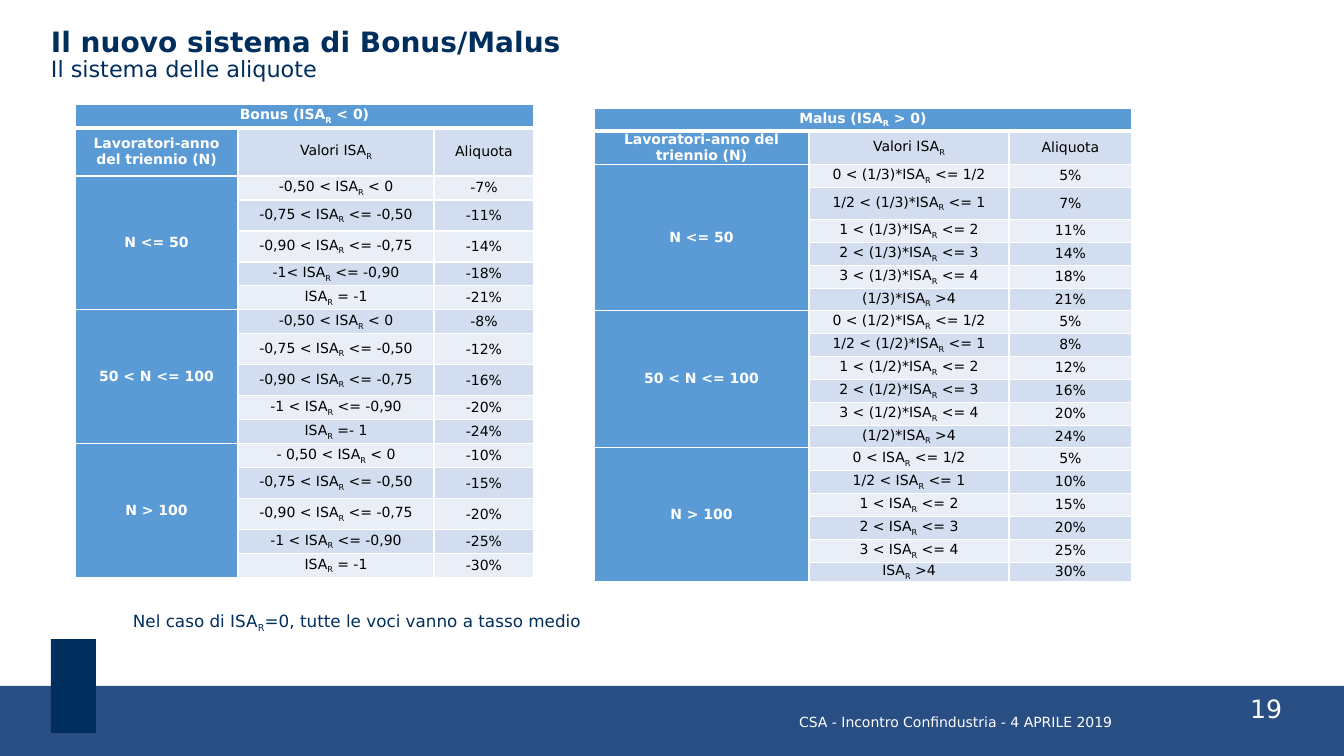
from lxml import etree
from pptx import Presentation
from pptx import util as u
from pptx.dml.color import RGBColor
from pptx.enum import shapes, text
from pptx.oxml.ns import qn

# Content: "_R" marks a subscript R
TITLE = "Il nuovo sistema di Bonus/Malus"
SUBTITLE = "Il sistema delle aliquote"
NOTE = "Nel caso di ISA_R=0, tutte le voci vanno a tasso medio"
FOOTER = "CSA - Incontro Confindustria - 4 APRILE 2019"
PAGE = "19"
HEADINGS = ("Lavoratori-anno del triennio (N)", "Valori ISA_R", "Aliquota")

BONUS = {
    "title": "Bonus (ISA_R < 0)",
    "at": (75, 104),
    "cols": (163, 196, 100),
    "rows": [24, 48] + [24, 31, 31, 24, 24] * 3,
    "groups": [
        ("N <= 50", [
            ("-0,50 < ISA_R < 0", "-7%"),
            ("-0,75 < ISA_R <= -0,50", "-11%"),
            ("-0,90 < ISA_R <= -0,75", "-14%"),
            ("-1< ISA_R <= -0,90", "-18%"),
            ("ISA_R = -1", "-21%")]),
        ("50 < N <= 100", [
            ("-0,50 < ISA_R < 0", "-8%"),
            ("-0,75 < ISA_R <= -0,50", "-12%"),
            ("-0,90 < ISA_R <= -0,75", "-16%"),
            ("-1 < ISA_R <= -0,90", "-20%"),
            ("ISA_R =- 1", "-24%")]),
        ("N > 100", [
            ("- 0,50 < ISA_R < 0", "-10%"),
            ("-0,75 < ISA_R <= -0,50", "-15%"),
            ("-0,90 < ISA_R <= -0,75", "-20%"),
            ("-1 < ISA_R <= -0,90", "-25%"),
            ("ISA_R = -1", "-30%")]),
    ],
}
MALUS = {
    "title": "Malus (ISA_R > 0)",
    "at": (594, 108),
    "cols": (215, 200, 123),
    "rows": [23, 33, 23, 32, 23, 23, 23, 22] + [23] * 5 + [22] + [23] * 5 + [17],
    "groups": [
        ("N <= 50", [
            ("0 < (1/3)*ISA_R <= 1/2", "5%"),
            ("1/2 < (1/3)*ISA_R <= 1", "7%"),
            ("1 < (1/3)*ISA_R <= 2", "11%"),
            ("2 < (1/3)*ISA_R <= 3", "14%"),
            ("3 < (1/3)*ISA_R <= 4", "18%"),
            ("(1/3)*ISA_R >4", "21%")]),
        ("50 < N <= 100", [
            ("0 < (1/2)*ISA_R <= 1/2", "5%"),
            ("1/2 < (1/2)*ISA_R <= 1", "8%"),
            ("1 < (1/2)*ISA_R <= 2", "12%"),
            ("2 < (1/2)*ISA_R <= 3", "16%"),
            ("3 < (1/2)*ISA_R <= 4", "20%"),
            ("(1/2)*ISA_R >4", "24%")]),
        ("N > 100", [
            ("0 < ISA_R <= 1/2", "5%"),
            ("1/2 < ISA_R <= 1", "10%"),
            ("1 < ISA_R <= 2", "15%"),
            ("2 < ISA_R <= 3", "20%"),
            ("3 < ISA_R <= 4", "25%"),
            ("ISA_R >4", "30%")]),
    ],
}

FONT = "DejaVu Sans"
NAVY = RGBColor(0x00, 0x2E, 0x5D)
BAND_BLUE = RGBColor(0x28, 0x4E, 0x83)
HEAD_BLUE = RGBColor(0x5B, 0x9B, 0xD5)
ROW_DARK = RGBColor(0xD2, 0xDE, 0xEF)
ROW_LIGHT = RGBColor(0xEA, 0xEF, 0xF7)
WHITE = RGBColor(0xFF, 0xFF, 0xFF)
BLACK = RGBColor(0x00, 0x00, 0x00)
ALIGN = text.PP_ALIGN


def px(n):
    return u.Emu(round(n * 914400 / 100.8))


def add_runs(p, content, size, color, bold=False):
    for i, part in enumerate(content.split("_R")):
        for piece, base in (("R", -25000), (part, 0)) if i else ((part, 0),):
            if not piece:
                continue
            r = p.add_run()
            r.text = piece
            r.font.name, r.font.size, r.font.bold = FONT, u.Pt(size), bold
            r.font.color.rgb = color
            if base:
                r.font._element.set("baseline", str(base))


def add_rect(slide, at, color):
    sp = slide.shapes.add_shape(shapes.MSO_SHAPE.RECTANGLE, *map(px, at))
    sp.shadow.inherit = False
    sp.fill.solid()
    sp.fill.fore_color.rgb = color
    sp.line.fill.background()


def add_box(slide, at, align, inset=True):
    tf = slide.shapes.add_textbox(*map(px, at)).text_frame
    tf.word_wrap = True
    if not inset:
        tf.margin_left = tf.margin_top = tf.margin_right = tf.margin_bottom = 0
    p = tf.paragraphs[0]
    p.alignment = align
    return p


def set_borders(cell, top, bottom):
    tc_pr = cell._tc.get_or_add_tcPr()
    widths = (("lnL", 1), ("lnR", 1), ("lnT", top), ("lnB", bottom))
    for i, (tag, width) in enumerate(widths):
        ln = etree.Element(qn("a:" + tag), w=str(u.Pt(width)))
        fill = etree.SubElement(ln, qn("a:solidFill"))
        etree.SubElement(fill, qn("a:srgbClr"), val=str(WHITE))
        tc_pr.insert(i, ln)


def add_rates(slide, data):
    # Flatten the groups into one grid of rows
    grid = [(data["title"], "", ""), HEADINGS]
    spans = []
    for name, rates in data["groups"]:
        spans.append((len(grid), len(grid) + len(rates) - 1))
        grid += [(name if i == 0 else "", *rate) for i, rate in enumerate(rates)]

    cols, rows = data["cols"], data["rows"]
    at = (*data["at"], sum(cols), sum(rows))
    table = slide.shapes.add_table(len(rows), len(cols), *map(px, at)).table
    table.first_row = table.horz_banding = False
    for column, width in zip(table.columns, cols):
        column.width = px(width)
    for row, height in zip(table.rows, rows):
        row.height = px(height)

    for i, values in enumerate(grid):
        for j, value in enumerate(values):
            cell = table.cell(i, j)
            head = i == 0 or j == 0
            cell.fill.solid()
            cell.fill.fore_color.rgb = (
                HEAD_BLUE if head else ROW_DARK if i % 2 else ROW_LIGHT)
            cell.margin_left = cell.margin_right = px(5)
            cell.margin_top = cell.margin_bottom = 0
            cell.vertical_anchor = text.MSO_ANCHOR.MIDDLE
            p = cell.text_frame.paragraphs[0]
            p.alignment = ALIGN.CENTER
            add_runs(p, value, 10, WHITE if head else BLACK, head)
            set_borders(cell, 3 if i == 1 else 1, 3 if i == 0 else 1)

    table.cell(0, 0).merge(table.cell(0, 2))
    for first, last in spans:
        table.cell(first, 0).merge(table.cell(last, 0))


prs = Presentation()
prs.slide_width, prs.slide_height = px(1344), px(756)
slide = prs.slides.add_slide(prs.slide_layouts[6])

# Footer band and marker
add_rect(slide, (0, 686, 1344, 70), BAND_BLUE)
add_rect(slide, (51, 639, 45, 94), NAVY)

# Title and subtitle
p = add_box(slide, (51, 28, 1242, 77), ALIGN.LEFT, inset=False)
p.line_spacing = 0.9
add_runs(p, TITLE, 20, NAVY, bold=True)
p.add_line_break()
add_runs(p, SUBTITLE, 16, NAVY)

# Note under the tables
p = add_box(slide, (104, 594, 525, 87), ALIGN.JUSTIFY)
p.line_spacing = 1.5
p.space_after = u.Pt(10)
p._p.get_or_add_pPr().set("marL", str(px(19)))
add_runs(p, NOTE, 12, NAVY)

# Rate tables
for data in (BONUS, MALUS):
    add_rates(slide, data)

# Page number and footer
add_runs(add_box(slide, (1132, 688, 160, 66), ALIGN.RIGHT), PAGE, 18, WHITE)
p = add_box(slide, (772, 714, 340, 40), ALIGN.RIGHT, inset=False)
add_runs(p, FOOTER, 10, WHITE)

prs.save("out.pptx")
